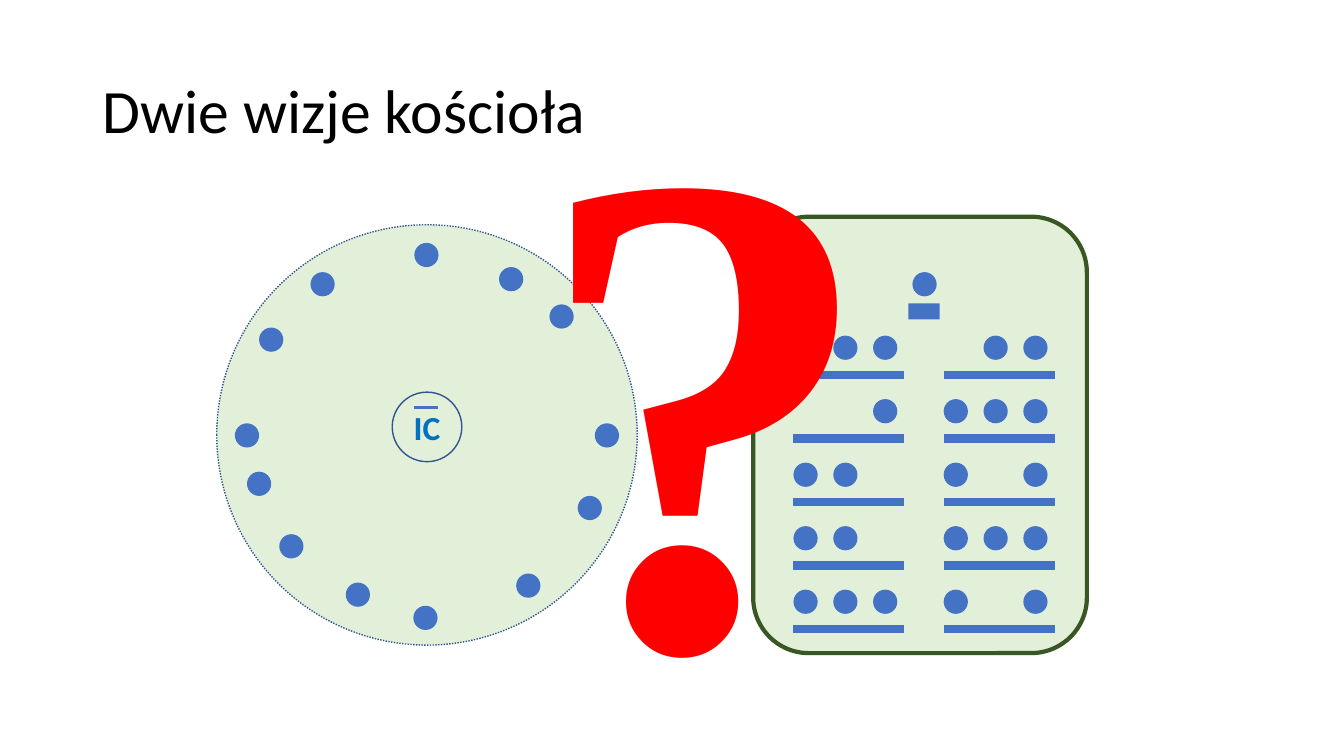
from pptx import Presentation
from pptx.dml.color import RGBColor
from pptx.enum.dml import MSO_LINE as Dash
from pptx.enum.shapes import MSO_CONNECTOR as Link, MSO_SHAPE as Form
from pptx.enum.text import MSO_ANCHOR as Anchor, PP_ALIGN as Align
from pptx.oxml.ns import qn
from pptx.util import Inches, Pt
from lxml import etree

BLUE, NAVY, PALE, GREEN = "4472C4", "325491", "E2F0D9", "385723"
DOT = 0.24
PEOPLE = [
    (1.95, 3.78), (1.96, 0.18), (3.75, 1.97), (0.18, 1.97), (0.42, 1.02),
    (0.93, 0.47), (2.8, 0.42), (3.3, 0.79), (3.58, 2.69), (2.97, 3.46),
    (1.28, 3.55), (0.3, 2.45), (0.62, 3.07),
]
PEWS = [("111", "011"), ("001", "111"), ("110", "101"), ("110", "111"), ("111", "101")]


def tint(code):
    """Turn a hex string into a colour."""
    return RGBColor.from_string(code)


def draw(shapes, form, box, fill=None, line=None, width=1):
    """Add a preset shape with an optional fill and outline."""
    shape = shapes.add_shape(form, *map(Inches, box))
    shape.shadow.inherit = False
    if fill:
        shape.fill.solid()
        shape.fill.fore_color.rgb = tint(fill)
    else:
        shape.fill.background()
    if line:
        shape.line.color.rgb = tint(line)
        shape.line.width = Pt(width)
    else:
        shape.line.fill.background()
    return shape


def dot(shapes, left, top):
    """Add one person."""
    draw(shapes, Form.OVAL, (left, top, DOT, DOT), BLUE)


def bar(shapes, left, top, length, width):
    """Add a level blue line."""
    line = shapes.add_connector(
        Link.STRAIGHT, Inches(left), Inches(top), Inches(left + length), Inches(top))
    line.line.color.rgb = tint(BLUE)
    line.line.width = Pt(width)
    etree.SubElement(line._element.spPr, qn("a:effectLst"))


def write(shape, text, size, color, font="Calibri", bold=False):
    """Set and format the text of a shape."""
    frame = shape.text_frame
    frame.text = text
    face = frame.paragraphs[0].runs[0].font
    face.name, face.size, face.bold = font, Pt(size), bold
    face.color.rgb = tint(color)
    return frame


def label(slide, box, *style):
    """Add a wrapped text box."""
    frame = write(slide.shapes.add_textbox(*map(Inches, box)), *style)
    frame.word_wrap = True
    return frame


def title(slide, box):
    """Add the slide title."""
    frame = label(slide, box, "Dwie wizje kościoła", 44, "000000")
    frame.vertical_anchor = Anchor.MIDDLE
    frame.paragraphs[0].line_spacing = 0.9


def hall(slide, box):
    """Draw the church with rows of pews facing a leader."""
    left, top, wide, high = box
    shapes = slide.shapes.add_group_shape().shapes
    draw(shapes, Form.ROUNDED_RECTANGLE, box, PALE, GREEN, 3)
    dot(shapes, left + 1.58, top + 0.55)
    draw(shapes, Form.RECTANGLE, (left + 1.54, top + 0.86, 0.31, 0.16), BLUE)
    for row, sides in enumerate(PEWS):
        y = top + 1.18 + row * 0.63
        for side, seats in enumerate(sides):
            x = left + 0.4 + side * 1.49
            bar(shapes, x, y + 0.39, 1.1, 6)
            for seat, taken in enumerate(seats):
                if taken == "1":
                    dot(shapes, x + seat * 0.395, y)


def ring(slide, box):
    """Draw the church gathered in a circle around its centre."""
    left, top, wide, high = box
    shapes = slide.shapes.add_group_shape().shapes
    disc = draw(shapes, Form.OVAL, box, PALE, NAVY)
    disc.line.dash_style = Dash.ROUND_DOT
    for x, y in PEOPLE:
        dot(shapes, left + x, top + y)
    core = draw(shapes, Form.OVAL, (left + 1.74, top + 1.66, 0.69, 0.69), None, NAVY)
    frame = write(core, "IC", 24, "0070C0", bold=True)
    frame.word_wrap = False
    frame.vertical_anchor = Anchor.MIDDLE
    frame.paragraphs[0].alignment = Align.CENTER
    bar(shapes, left + 1.96, top + 1.81, 0.23, 2.25)


def main():
    """Build the slide and save it."""
    deck = Presentation()
    deck.slide_width, deck.slide_height = Inches(13.33), Inches(7.5)
    slide = deck.slides.add_slide(deck.slide_layouts[6])
    title(slide, (0.92, 0.4, 11.5, 1.45))
    hall(slide, (7.47, 2.15, 3.31, 4.33))
    ring(slide, (2.15, 2.23, 4.17, 4.17))
    label(slide, (5.17, -0.5, 2.3, 8.45), "?", 496, "FF0000", "Times New Roman", True)
    deck.save("out.pptx")


if __name__ == "__main__":
    main()
